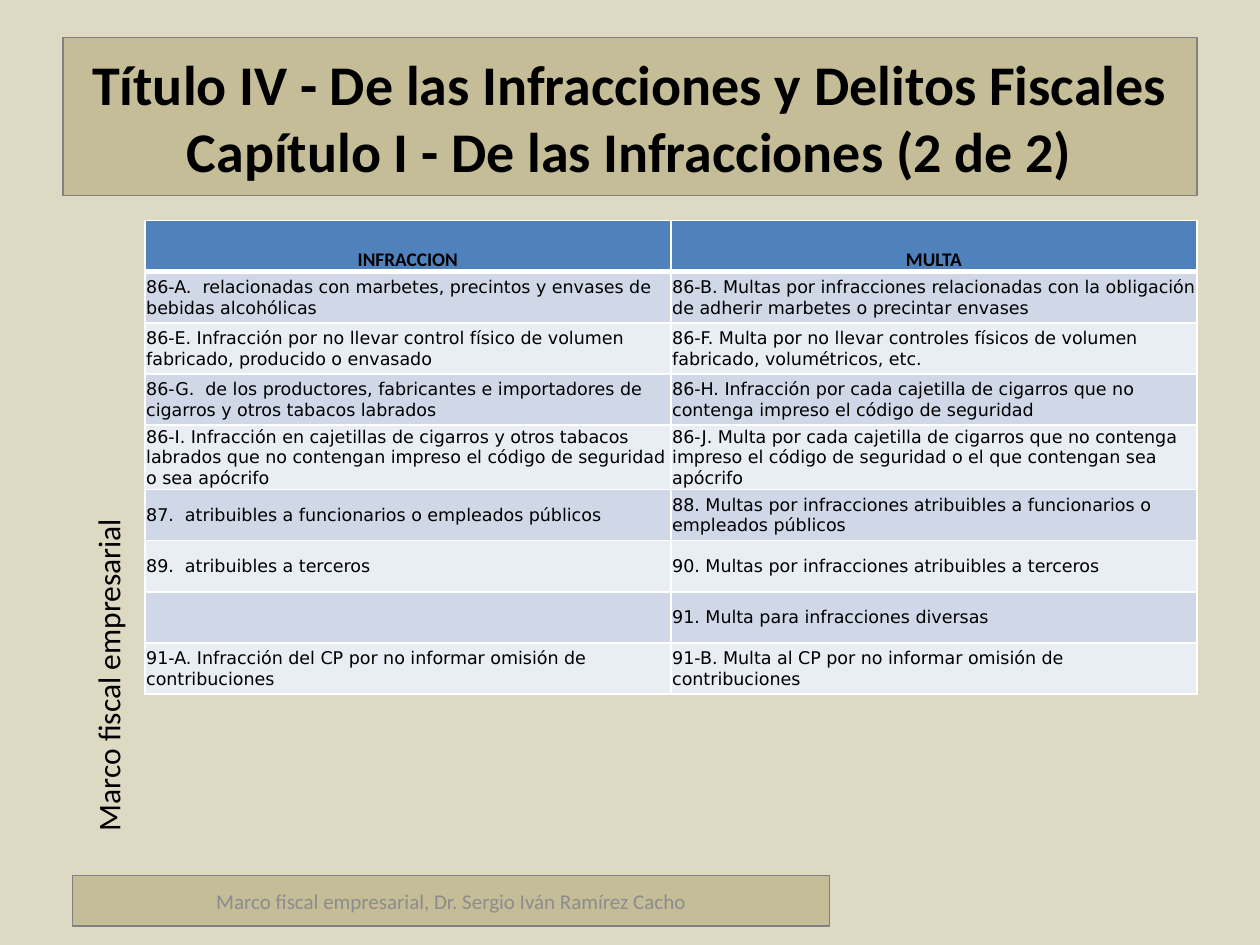
"""Builds the slide on tax infractions and their fines."""
from lxml.etree import SubElement
from pptx import Presentation
from pptx.dml.color import RGBColor
from pptx.enum.shapes import MSO_SHAPE
from pptx.enum.text import MSO_ANCHOR, PP_ALIGN
from pptx.oxml.ns import qn
from pptx.util import Pt

SAND = RGBColor(0xDD, 0xD9, 0xC3)
KHAKI = RGBColor(0xC4, 0xBD, 0x97)
OUTLINE = RGBColor(0x80, 0x80, 0x80)
MUTED = RGBColor(0x8C, 0x8C, 0x8C)
BLACK = RGBColor(0x00, 0x00, 0x00)
WHITE = RGBColor(0xFF, 0xFF, 0xFF)
HEADER_BLUE = RGBColor(0x4F, 0x81, 0xBD)
BAND_DARK = RGBColor(0xD0, 0xD8, 0xE8)
BAND_LIGHT = RGBColor(0xE9, 0xED, 0xF4)

HEADINGS = ("INFRACCION", "MULTA")
ARTICLES = [
    ("86-A.  relacionadas con marbetes, precintos y envases de bebidas alcohólicas",
     "86-B. Multas por infracciones relacionadas con la obligación de adherir marbetes o precintar envases"),
    ("86-E. Infracción por no llevar control físico de volumen fabricado, producido o envasado",
     "86-F. Multa por no llevar controles físicos de volumen fabricado, volumétricos, etc."),
    ("86-G.  de los productores, fabricantes e importadores de cigarros y otros tabacos labrados",
     "86-H. Infracción por cada cajetilla de cigarros que no contenga impreso el código de seguridad"),
    ("86-I. Infracción en cajetillas de cigarros y otros tabacos labrados que no contengan impreso "
     "el código de seguridad o sea apócrifo",
     "86-J. Multa por cada cajetilla de cigarros que no contenga impreso el código de seguridad "
     "o el que contengan sea apócrifo"),
    ("87.  atribuibles a funcionarios o empleados públicos",
     "88. Multas por infracciones atribuibles a funcionarios o empleados públicos"),
    ("89.  atribuibles a terceros",
     "90. Multas por infracciones atribuibles a terceros"),
    ("", "91. Multa para infracciones diversas"),
    ("91-A. Infracción del CP por no informar omisión de contribuciones",
     "91-B. Multa al CP por no informar omisión de contribuciones"),
]


def write(frame, text, size, font="Calibri", color=BLACK, bold=False, align=PP_ALIGN.LEFT):
    frame.word_wrap = True
    paragraph = frame.paragraphs[0]
    paragraph.text = text
    paragraph.alignment = align
    for run in paragraph.runs:
        run.font.size = Pt(size)
        run.font.name = font
        run.font.bold = bold
        run.font.color.rgb = color


def add_panel(slide, left, top, width, height, text, size, **text_format):
    panel = slide.shapes.add_shape(MSO_SHAPE.RECTANGLE, Pt(left), Pt(top), Pt(width), Pt(height))
    panel.shadow.inherit = False
    panel.fill.solid()
    panel.fill.fore_color.rgb = KHAKI
    panel.line.color.rgb = OUTLINE
    panel.line.width = Pt(0.75)
    panel.text_frame.vertical_anchor = MSO_ANCHOR.MIDDLE
    write(panel.text_frame, text, size, align=PP_ALIGN.CENTER, **text_format)


def add_side_label(slide, text):
    label = slide.shapes.add_textbox(Pt(-116.6), Pt(289.4), Pt(356.4), Pt(28.8))
    label.rotation = 270
    write(label.text_frame, text, 18)


def add_borders(cell, top=1, bottom=1):
    properties = cell._tc.get_or_add_tcPr()
    for side, width in (("L", 1), ("R", 1), ("T", top), ("B", bottom)):
        line = SubElement(properties, qn(f"a:ln{side}"), w=str(Pt(width)))
        SubElement(SubElement(line, qn("a:solidFill")), qn("a:srgbClr"), val=str(WHITE))


def fill_cell(cell, text, fill, anchor, borders, **text_format):
    cell.margin_left = cell.margin_right = cell.margin_top = Pt(0.75)
    cell.margin_bottom = 0
    cell.vertical_anchor = anchor
    add_borders(cell, **borders)
    cell.fill.solid()
    cell.fill.fore_color.rgb = fill
    if text:
        write(cell.text_frame, text, **text_format)


def add_fines_table(slide):
    row_height = 29.25
    row_count = len(ARTICLES) + 1
    fines = slide.shapes.add_table(row_count, 2, Pt(82.8), Pt(126), Pt(601.2),
                                   Pt(row_height * row_count)).table
    for row in fines.rows:
        row.height = Pt(row_height)
    for column, heading in enumerate(HEADINGS):
        fill_cell(fines.cell(0, column), heading, HEADER_BLUE, MSO_ANCHOR.BOTTOM, {"bottom": 3},
                  size=11, bold=True, align=PP_ALIGN.CENTER)
    for row, article in enumerate(ARTICLES, 1):
        band = BAND_DARK if row % 2 else BAND_LIGHT
        borders = {"top": 3 if row == 1 else 1}
        for column, text in enumerate(article):
            fill_cell(fines.cell(row, column), text, band, MSO_ANCHOR.MIDDLE, borders,
                      size=10, font="DejaVu Sans")


def main():
    presentation = Presentation()
    presentation.slide_width, presentation.slide_height = Pt(720), Pt(540)
    slide = presentation.slides.add_slide(presentation.slide_layouts[6])
    slide.background.fill.solid()
    slide.background.fill.fore_color.rgb = SAND
    add_side_label(slide, "Marco fiscal empresarial")
    add_panel(slide, 36, 21.6, 648, 90,
              "Título IV - De las Infracciones y Delitos Fiscales\v"
              "Capítulo I - De las Infracciones (2 de 2)", 32, bold=True)
    add_panel(slide, 41.5, 500.4, 432.7, 28.8,
              "Marco fiscal empresarial, Dr. Sergio Iván Ramírez Cacho", 12, color=MUTED)
    add_fines_table(slide)
    presentation.save("out.pptx")


if __name__ == "__main__":
    main()
